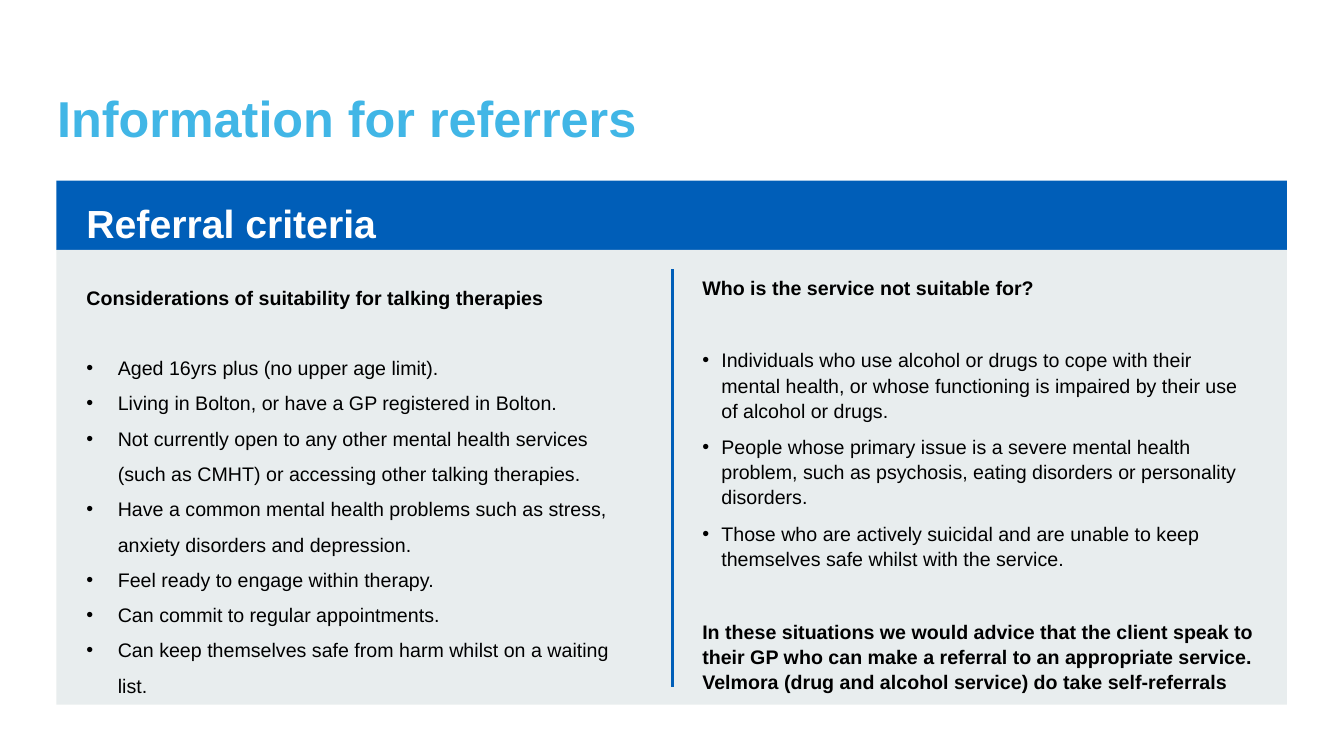
from dataclasses import dataclass

from lxml import etree
from pptx import Presentation
from pptx.dml.color import RGBColor
from pptx.enum.shapes import MSO_CONNECTOR, MSO_SHAPE
from pptx.enum.text import MSO_AUTO_SIZE
from pptx.oxml.ns import qn
from pptx.util import Cm, Pt

RECT = MSO_SHAPE.RECTANGLE
STRAIGHT = MSO_CONNECTOR.STRAIGHT
GROW = MSO_AUTO_SIZE.SHAPE_TO_FIT_TEXT

FONT = "Arial"
BLUE, SKY, PALE = "005EB8", "41B6E6", "E8EDEE"
WHITE, BLACK = "FFFFFF", "000000"

PANEL_LEFT, PANEL_WIDTH = 1.42, 31.01
TEXT_LEFT, COLUMN_TOP = 1.93, 6.78
COLUMN_WIDTH, COLUMN_HEIGHT = 14.4, 10.92


@dataclass(frozen=True)
class Band:
    top: float
    height: float
    color: str


@dataclass(frozen=True)
class Para:
    text: str
    bold: bool = True
    indent: float = 0
    after: float = 0


@dataclass(frozen=True)
class TextBlock:
    left: float
    top: float
    width: float
    height: float
    paras: list[Para]
    size: float = 14
    color: str = BLACK
    spacing: float = 1.0


def bullets(texts: list[str], indent: float, after: float, last_after: float) -> list[Para]:
    last = len(texts) - 1
    return [Para(text, False, indent, last_after if i == last else after)
            for i, text in enumerate(texts)]


BANDS = [Band(4.55, 1.75, BLUE), Band(6.3, 11.46, PALE)]

SUITABLE = [
    "Aged 16yrs plus (no upper age limit).",
    "Living in Bolton, or have a GP registered in Bolton.",
    "Not currently open to any other mental health services (such as CMHT) "
    "or accessing other talking therapies.",
    "Have a common mental health problems such as stress, anxiety disorders and depression.",
    "Feel ready to engage within therapy.",
    "Can commit to regular appointments.",
    "Can keep themselves safe from harm whilst on a waiting list.",
]
NOT_SUITABLE = [
    "Individuals who use alcohol or drugs to cope with their mental health, "
    "or whose functioning is impaired by their use of alcohol or drugs.",
    "People whose primary issue is a severe mental health problem, "
    "such as psychosis, eating disorders or personality disorders.",
    "Those who are actively suicidal and are unable to keep themselves safe "
    "whilst with the service.",
]
ADVICE = ("In these situations we would advice that the client speak to their GP "
          "who can make a referral to an appropriate service. "
          "Velmora (drug and alcohol service) do take self-referrals")

TEXTS = [
    TextBlock(TEXT_LEFT, 4.9, 8.2, 1.45, [Para("Referral criteria")], 28, WHITE),
    TextBlock(1.19, 1.3, 17.17, 2.29, [Para("Information for referrers")], 36, SKY, 1.5),
    TextBlock(TEXT_LEFT, COLUMN_TOP, COLUMN_WIDTH, COLUMN_HEIGHT,
              [Para("Considerations of suitability for talking therapies", after=25),
               *bullets(SUITABLE, 0.79, 0, 0)], spacing=1.5),
    TextBlock(17.45, COLUMN_TOP, COLUMN_WIDTH, COLUMN_HEIGHT,
              [Para("Who is the service not suitable for?", after=34),
               *bullets(NOT_SUITABLE, 0.48, 8, 34),
               Para(ADVICE, after=8)], spacing=1.07),
]


def rgb(color: str) -> RGBColor:
    return RGBColor.from_string(color)


def add_band(s, band: Band) -> None:
    sp = s.shapes.add_shape(RECT, Cm(PANEL_LEFT), Cm(band.top), Cm(PANEL_WIDTH), Cm(band.height))
    sp.shadow.inherit = False
    sp.fill.solid()
    sp.fill.fore_color.rgb = rgb(band.color)
    sp.line.fill.background()


def add_divider(s, x: float, top: float, bottom: float) -> None:
    line = s.shapes.add_connector(STRAIGHT, Cm(x), Cm(top), Cm(x), Cm(bottom))
    line.line.color.rgb = rgb(BLUE)
    line.line.width = Pt(2.25)
    etree.SubElement(line._element.spPr, qn("a:effectLst"))


def set_bullet(p, indent: float) -> None:
    pPr = p._p.get_or_add_pPr()
    pPr.set("marL", str(Cm(indent)))
    pPr.set("indent", str(-Cm(indent)))
    etree.SubElement(pPr, qn("a:buFont"), typeface=FONT)
    etree.SubElement(pPr, qn("a:buChar"), char="•")


def add_text(s, block: TextBlock) -> None:
    sp = s.shapes.add_textbox(Cm(block.left), Cm(block.top), Cm(block.width), Cm(block.height))
    tf = sp.text_frame
    tf.word_wrap = True
    tf.auto_size = GROW
    for i, para in enumerate(block.paras):
        p = tf.add_paragraph() if i else tf.paragraphs[0]
        p.line_spacing = block.spacing
        p.space_after = Pt(para.after)
        if para.indent:
            set_bullet(p, para.indent)
        r = p.add_run()
        r.text = para.text
        r.font.name = FONT
        r.font.size = Pt(block.size)
        r.font.bold = para.bold
        r.font.color.rgb = rgb(block.color)


def main() -> None:
    prs = Presentation()
    prs.slide_width, prs.slide_height = Cm(33.87), Cm(19.05)
    s = prs.slides.add_slide(prs.slide_layouts[6])

    # Header bar and panel
    for band in BANDS:
        add_band(s, band)

    # Line between the columns
    add_divider(s, 16.94, 6.78, 17.3)

    # Headings and columns
    for block in TEXTS:
        add_text(s, block)

    prs.save("out.pptx")


if __name__ == "__main__":
    main()
